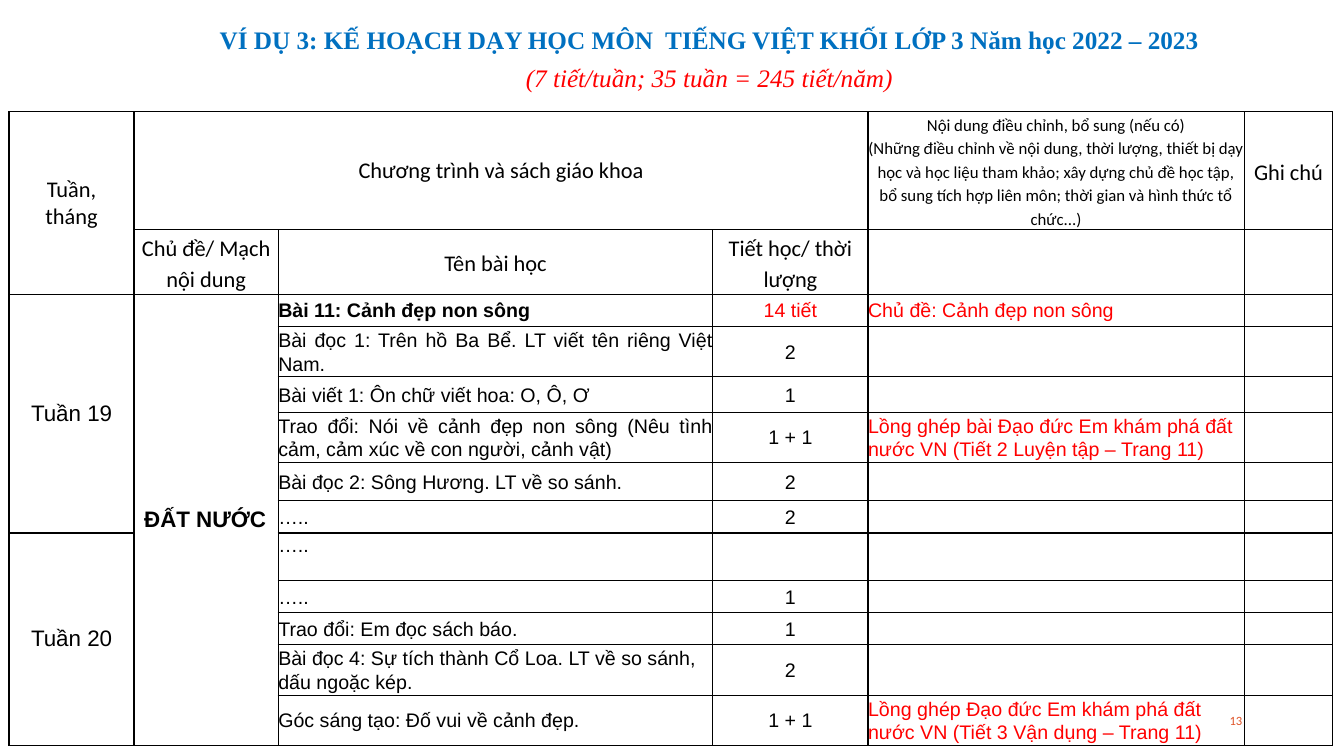
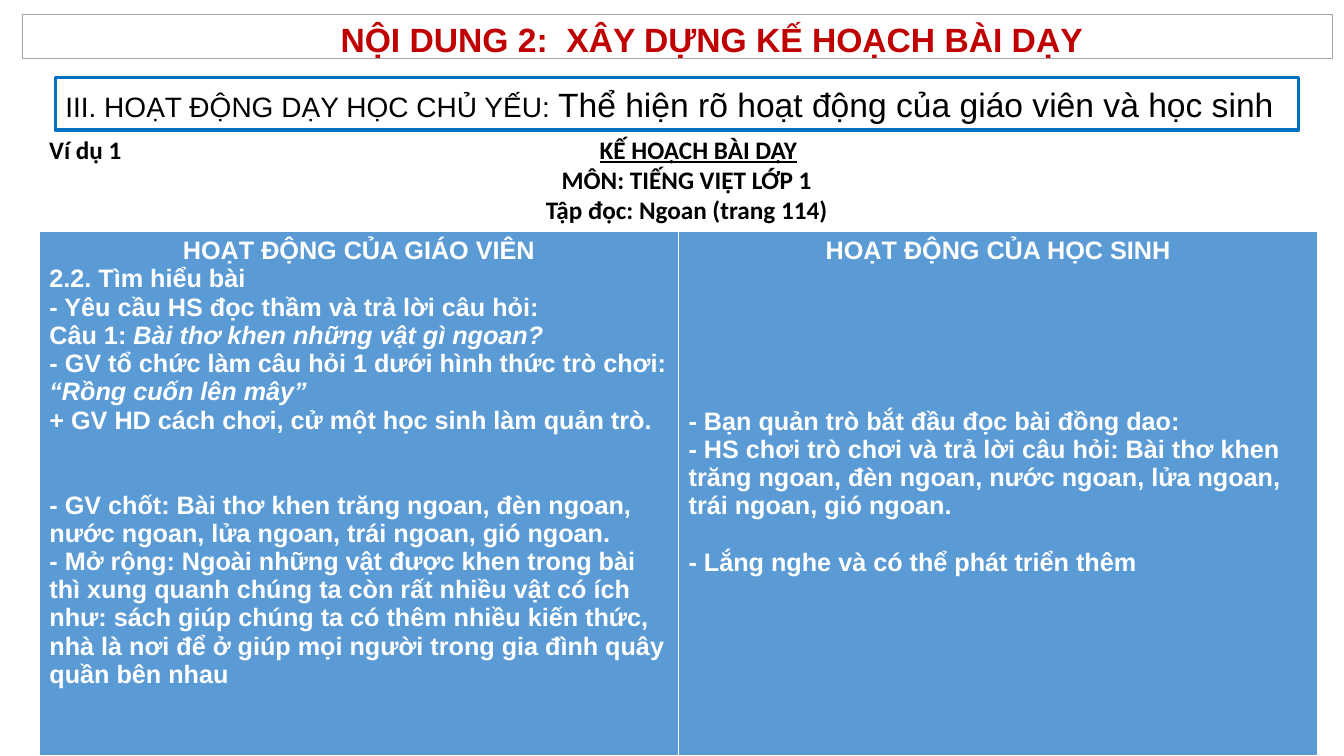
from lxml.etree import SubElement
from pptx import Presentation
from pptx.dml.color import RGBColor
from pptx.enum.shapes import MSO_SHAPE
from pptx.enum.text import MSO_ANCHOR, PP_ALIGN
from pptx.oxml import parse_xml
from pptx.oxml.ns import nsdecls, qn
from pptx.util import Inches, Pt

BLACK, WHITE, RED, BLUE = "000000", "FFFFFF", "FF0000", "0070C0"
LEFT, CENTER, RIGHT, JUSTIFY = PP_ALIGN.LEFT, PP_ALIGN.CENTER, PP_ALIGN.RIGHT, PP_ALIGN.JUSTIFY
SIDES = ("margin_left", "margin_top", "margin_right", "margin_bottom")


def write(frame, paragraphs, look, layout):
    frame.word_wrap = True
    for index, (spans, changes) in enumerate(paragraphs):
        para = frame.paragraphs[0] if index == 0 else frame.add_paragraph()
        for name, value in {**layout, **changes}.items():
            setattr(para, name, value)
        for text, extra in spans:
            span = para.add_run()
            span.text = text
            style = {**look, **extra}
            span.font.color.rgb = RGBColor.from_string(style.pop("color"))
            for name, value in style.items():
                setattr(span.font, name, value)


def border(cell, color):
    properties = cell._tc.get_or_add_tcPr()
    for side in "LRTB":
        properties.append(parse_xml(
            f'<a:ln{side} w="12700" {nsdecls("a")}><a:solidFill>'
            f'<a:srgbClr val="{color}"/></a:solidFill></a:ln{side}>'))


deck = Presentation()
deck.slide_width, deck.slide_height = Inches(13.33), Inches(7.5)
blank = deck.slide_layouts[6]

page = deck.slides.add_slide(blank)
number_box = page.shapes.add_textbox(Inches(9.42), Inches(6.95), Inches(3), Inches(0.4))
number_box.text_frame.vertical_anchor = MSO_ANCHOR.MIDDLE
write(number_box.text_frame, [([("13", {})], {})],
      {"name": "Calibri", "size": Pt(9), "color": "DF5327"}, {"alignment": RIGHT})

lessons = [
    ("Bài 11: Cảnh đẹp non sông", "14 tiết", "Chủ đề: Cảnh đẹp non sông"),
    ("Bài đọc 1: Trên hồ Ba Bể. LT viết tên riêng Việt Nam.", "2", ""),
    ("Bài viết 1: Ôn chữ viết hoa: O, Ô, Ơ", "1", ""),
    ("Trao đổi: Nói về cảnh đẹp non sông (Nêu tình cảm, cảm xúc về con người, cảnh vật)", "1 + 1",
     "Lồng ghép bài Đạo đức Em khám phá đất nước VN (Tiết 2 Luyện tập – Trang 11)"),
    ("Bài đọc 2: Sông Hương. LT về so sánh.", "2", ""),
    ("…..", "2", ""),
    ("…..", "", ""),
    ("…..", "1", ""),
    ("Trao đổi: Em đọc sách báo.", "1", ""),
    ("Bài đọc 4: Sự tích thành Cổ Loa. LT về so sánh, dấu ngoặc kép.", "2", ""),
    ("Góc sáng tạo: Đố vui về cảnh đẹp.", "1 + 1",
     "Lồng ghép Đạo đức Em khám phá đất nước VN (Tiết 3 Vận dụng – Trang 11)"),
]
widths = [1.24, 1.43, 4.31, 1.54, 3.73, 0.88]
heights = [1.17, 0.64, 0.32, 0.47, 0.35, 0.47, 0.38, 0.32, 0.47, 0.32, 0.32, 0.47, 0.47]
plan = page.shapes.add_table(len(heights), len(widths), Inches(0.09), Inches(1.11),
                             Inches(sum(widths)), Inches(sum(heights))).table
plan.first_row = plan.horz_banding = False
for column, width in zip(plan.columns, widths):
    column.width = Inches(width)
for row, height in zip(plan.rows, heights):
    row.height = Inches(height)
for cell in plan.iter_cells():
    border(cell, BLACK)
    cell.fill.background()
    cell.vertical_anchor = MSO_ANCHOR.MIDDLE
    for side in SIDES:
        setattr(cell, side, 0)
for top, left, bottom, right in [(0, 0, 1, 0), (0, 1, 0, 3), (2, 0, 7, 0), (2, 1, 12, 1), (8, 0, 12, 0)]:
    plan.cell(top, left).merge(plan.cell(bottom, right))

header = {"name": "Calibri", "size": Pt(16), "color": BLACK}
group = {"name": "Arial", "size": Pt(16), "color": BLACK}
centered = {"alignment": CENTER}
spaced = {"alignment": CENTER, "line_spacing": 1.15}
labels = [
    (0, 0, ["Tuần, tháng"], header, centered),
    (0, 1, ["Chương trình và sách giáo khoa"], header, centered),
    (0, 4, ["Nội dung điều chỉnh, bổ sung (nếu có)",
            "(Những điều chỉnh về nội dung, thời lượng, thiết bị dạy học và học liệu tham khảo; "
            "xây dựng chủ đề học tập, bổ sung tích hợp liên môn; thời gian và hình thức tổ chức...)"],
     {**header, "size": Pt(12)}, spaced),
    (0, 5, ["Ghi chú"], header, spaced),
    (1, 1, ["Chủ đề/ Mạch nội dung"], header, spaced),
    (1, 2, ["Tên bài học"], header, spaced),
    (1, 3, ["Tiết học/ thời lượng"], header, spaced),
    (2, 0, ["Tuần 19"], group, centered),
    (2, 1, ["ĐẤT NƯỚC"], {**group, "bold": True}, {"alignment": LEFT}),
    (8, 0, ["Tuần 20"], group, centered),
]
for row, column, lines, look, layout in labels:
    cell = plan.cell(row, column)
    if layout is not spaced:
        cell.margin_left = cell.margin_right = Inches(0.1)
    write(cell.text_frame, [([(line, {})], {}) for line in lines], look, layout)

for row, lesson in enumerate(lessons, 2):
    for column, text in enumerate(lesson, 2):
        if not text:
            continue
        look = {"name": "Arial", "size": Pt(14), "bold": row == 2 and column == 2,
                "color": RED if column == 4 or (row == 2 and column == 3) else BLACK}
        align = CENTER if column == 3 else JUSTIFY if column == 2 and 3 <= row <= 6 else LEFT
        write(plan.cell(row, column).text_frame, [([(text, {})], {})], look,
              {"alignment": align, "line_spacing": 1.07})
plan.cell(8, 2).vertical_anchor = MSO_ANCHOR.TOP
for cell in plan.iter_cells():
    if not cell.text_frame.text:
        SubElement(cell.text_frame.paragraphs[0]._p, qn("a:endParaRPr"), sz="1400")

title_box = page.shapes.add_textbox(Inches(1.89), Inches(0.19), Inches(10.29), Inches(0.75))
write(title_box.text_frame, [
    ([("VÍ DỤ 3: KẾ HOẠCH DẠY HỌC MÔN  TIẾNG VIỆT KHỐI LỚP 3 Năm học 2022 – 2023", {"bold": True})], {}),
    ([("(7 tiết/tuần; 35 tuần = 245 tiết/năm)", {"color": RED, "italic": True})], {}),
], {"name": "Times New Roman", "size": Pt(18), "color": BLUE},
    {"alignment": CENTER, "space_before": Pt(3), "space_after": Pt(3)})

page = deck.slides.add_slide(blank)
banners = [
    ((0.55, 0.77, 12.33, 0.52), BLUE, 2.25, MSO_ANCHOR.MIDDLE, JUSTIFY, BLACK,
     [("III. HOẠT ĐỘNG DẠY HỌC CHỦ YẾU: ", {"size": Pt(20)}),
      ("Thể hiện rõ hoạt động của giáo viên và học sinh", {})]),
    ((0.22, 0.14, 13, 0.44), "A5A5A5", 0.5, MSO_ANCHOR.TOP, CENTER, "C00000",
     [("NỘI DUNG 2:  XÂY DỰNG KẾ HOẠCH BÀI DẠY", {"bold": True})]),
]
for place, outline, weight, anchor, align, color, spans in banners:
    banner = page.shapes.add_shape(MSO_SHAPE.RECTANGLE, *[Inches(value) for value in place])
    banner.shadow.inherit = False
    banner.fill.solid()
    banner.fill.fore_color.rgb = RGBColor.from_string(WHITE)
    banner.line.color.rgb = RGBColor.from_string(outline)
    banner.line.width = Pt(weight)
    banner.text_frame.vertical_anchor = anchor
    write(banner.text_frame, [(spans, {})],
          {"name": "Arial", "size": Pt(24), "color": color}, {"alignment": align})
indents = banner.text_frame.paragraphs[0]._p.get_or_add_pPr()
indents.set("marL", str(Inches(0.18)))
indents.set("indent", str(Inches(0.5)))

plan_box = page.shapes.add_textbox(Inches(0.39), Inches(1.28), Inches(12.84), Inches(1))
write(plan_box.text_frame, [
    ([("Ví dụ 1\t", {}), ("KẾ HOẠCH BÀI DẠY", {"underline": True})], {"alignment": LEFT}),
    ([("MÔN: TIẾNG VIỆT LỚP 1", {})], {}),
    ([("Tập đọc: Ngoan (trang 114)", {})], {}),
], {"name": "Calibri", "size": Pt(18), "bold": True, "color": BLACK}, {"alignment": CENTER})
tabs = SubElement(plan_box.text_frame.paragraphs[0]._p.get_or_add_pPr(), qn("a:tabLst"))
SubElement(tabs, qn("a:tab"), pos=str(Inches(5.46)), algn="l")

italic = {"italic": True}
line_height = 20.3
activities = [
    [([("HOẠT ĐỘNG CỦA GIÁO VIÊN", {})], centered),
     ([("2.2. Tìm hiểu bài", {})], {}),
     ([("- Yêu cầu HS đọc thầm và trả lời câu hỏi:", {})], {}),
     ([("Câu 1: ", {}), ("Bài thơ khen những vật gì ngoan?", italic)], {}),
     ([("- GV tổ chức làm câu hỏi 1 dưới hình thức trò chơi: ", {}), ("“Rồng cuốn lên mây”", italic)], {}),
     ([("+ GV HD cách chơi, cử một học sinh làm quản trò.", {})], {}),
     ([("- GV chốt: Bài thơ khen trăng ngoan, đèn ngoan, nước ngoan, lửa ngoan, "
        "trái ngoan, gió ngoan.", {})], {"space_before": Pt(2 * line_height)}),
     ([("- Mở rộng: Ngoài những vật được khen trong bài thì xung quanh chúng ta còn rất nhiều vật "
        "có ích như: sách giúp chúng ta có thêm nhiều kiến thức, nhà là nơi để ở giúp mọi người "
        "trong gia đình quây quần bên nhau", {})], {})],
    [([("HOẠT ĐỘNG CỦA HỌC SINH", {})], centered),
     ([("- Bạn quản trò bắt đầu đọc bài đồng dao:", {})], {"space_before": Pt(5 * line_height)}),
     ([("- HS chơi trò chơi và trả lời câu hỏi: Bài thơ khen trăng ngoan, đèn ngoan, nước ngoan, "
        "lửa ngoan, trái ngoan, gió ngoan.", {})], {}),
     ([("- Lắng nghe và có thể phát triển thêm", {})], {"space_before": Pt(line_height)})],
]
lesson_table = page.shapes.add_table(1, 2, Inches(0.39), Inches(2.3), Inches(12.68), Inches(5.2)).table
lesson_table.first_row = lesson_table.horz_banding = False
for cell, paragraphs in zip(lesson_table.iter_cells(), activities):
    border(cell, WHITE)
    cell.fill.solid()
    cell.fill.fore_color.rgb = RGBColor.from_string("5B9BD5")
    write(cell.text_frame, paragraphs,
          {"name": "Arial", "size": Pt(18), "bold": True, "color": WHITE}, {"alignment": LEFT})

deck.save("out.pptx")
